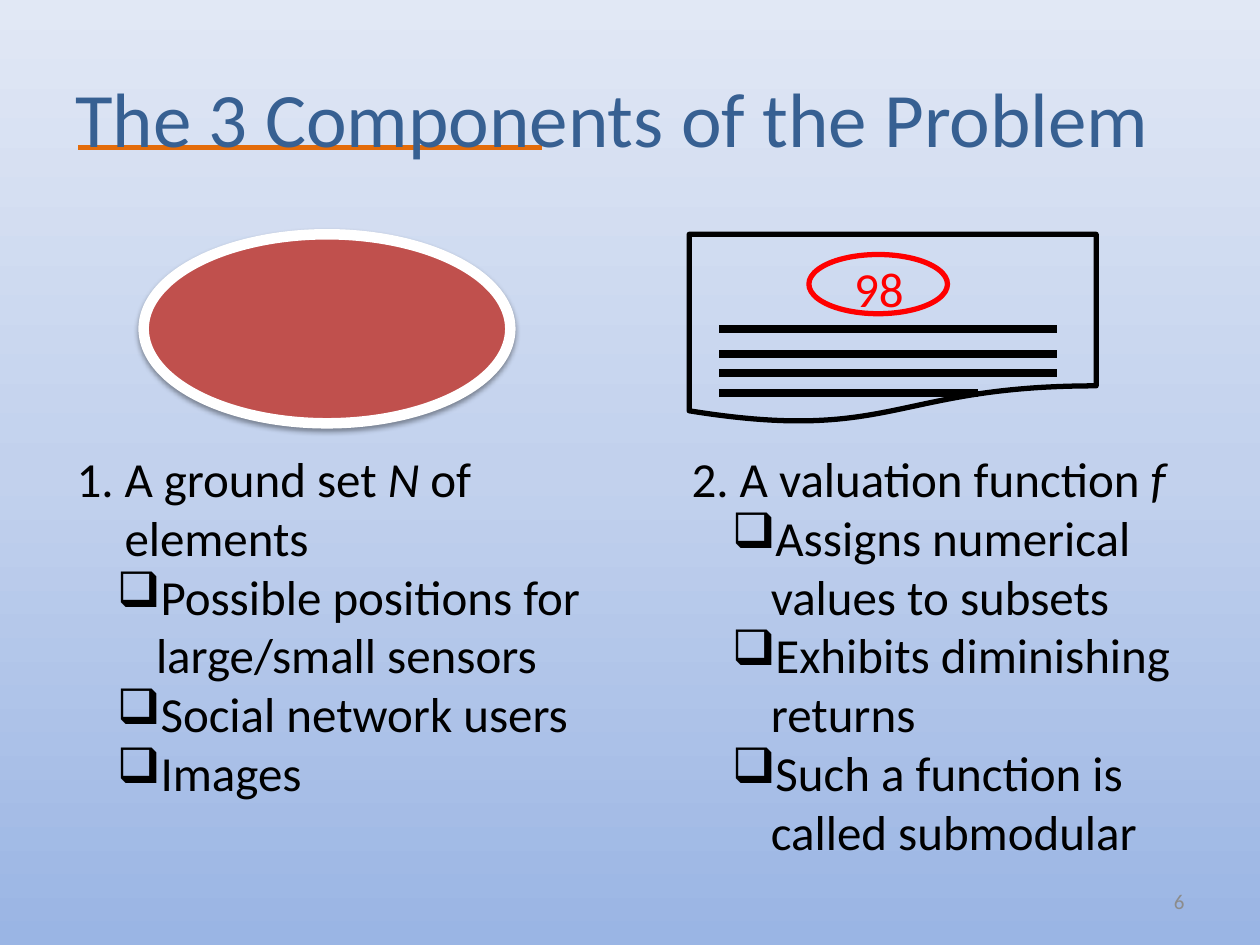
"""Build the slide on the three components of the problem."""
from copy import deepcopy

from lxml.etree import SubElement
from pptx import Presentation
from pptx.dml.color import RGBColor
from pptx.enum.shapes import MSO_CONNECTOR, MSO_SHAPE
from pptx.enum.text import MSO_ANCHOR, MSO_AUTO_SIZE, PP_ALIGN
from pptx.oxml.ns import qn
from pptx.util import Inches, Pt

BLACK = RGBColor(0x00, 0x00, 0x00)
WHITE = RGBColor(0xFF, 0xFF, 0xFF)
RED = RGBColor(0xFF, 0x00, 0x00)
BRICK = RGBColor(0xC0, 0x50, 0x4D)
BLUE = RGBColor(0x37, 0x60, 0x92)
ORANGE = RGBColor(0xE4, 0x6C, 0x0A)
GRAY = RGBColor(0x8C, 0x8C, 0x8C)
BACKGROUND = (
    RGBColor(0x9A, 0xB5, 0xE4),
    RGBColor(0xC2, 0xD1, 0xED),
    RGBColor(0xE1, 0xE8, 0xF5),
)


class SlideBuilder:
    """Hold the text style and the current slide."""

    font_name = "Calibri"
    body_size = 28

    def __init__(self, slide):
        """Start drawing on a slide."""
        self.slide = slide

    def background(self, colors):
        """Fill the background with evenly spaced colours from bottom to top."""
        fill = self.slide.background.fill
        fill.gradient()
        fill.gradient_angle = 90
        stops = fill.gradient_stops
        stop_list = self.slide.background._cSld.find(".//" + qn("a:gsLst"))
        while len(stop_list) < len(colors):
            stop_list.append(deepcopy(stop_list[-1]))
        stops = fill.gradient_stops
        for index, color in enumerate(colors):
            stops[index].color.rgb = color
            stops[index].position = index / (len(colors) - 1)

    def line(self, left, right, top, color, width, parent=None):
        """Draw a horizontal line."""
        shapes = (parent or self.slide).shapes
        connector = shapes.add_connector(
            MSO_CONNECTOR.STRAIGHT, Inches(left), Inches(top), Inches(right), Inches(top)
        )
        connector.line.color.rgb = color
        connector.line.width = Pt(width)
        SubElement(connector._element.spPr, qn("a:effectLst"))

    def shape(self, kind, box, color, width, fill=None, parent=None):
        """Draw an outlined preset shape."""
        shapes = (parent or self.slide).shapes
        shape = shapes.add_shape(kind, *map(Inches, box))
        shape.shadow.inherit = False
        if fill is None:
            shape.fill.background()
        else:
            shape.fill.solid()
            shape.fill.fore_color.rgb = fill
        shape.line.color.rgb = color
        shape.line.width = Pt(width)
        return shape

    def shadow(self, shape):
        """Give a shape a soft shadow below it."""
        effects = shape._element.spPr.find(qn("a:effectLst"))
        outer = SubElement(
            effects, qn("a:outerShdw"), blurRad=str(Pt(3.1)), dist=str(Pt(1.6)),
            dir="5400000", rotWithShape="0",
        )
        color = SubElement(outer, qn("a:srgbClr"), val=str(BLACK))
        SubElement(color, qn("a:alpha"), val="38000")

    def text_box(self, box, wrap=True, anchor=MSO_ANCHOR.TOP, grow=False, parent=None):
        """Add an empty text box and return its text frame."""
        shapes = (parent or self.slide).shapes
        frame = shapes.add_textbox(*map(Inches, box)).text_frame
        frame.word_wrap = wrap
        frame.vertical_anchor = anchor
        if grow:
            frame.auto_size = MSO_AUTO_SIZE.SHAPE_TO_FIT_TEXT
        return frame

    def style(self, paragraph, size, color, align=PP_ALIGN.LEFT):
        """Set the font and alignment of a paragraph."""
        paragraph.alignment = align
        paragraph.font.name = self.font_name
        paragraph.font.size = Pt(size)
        paragraph.font.color.rgb = color

    def label(self, box, text, size, color, align=PP_ALIGN.LEFT, **options):
        """Add a single line of text."""
        paragraph = self.text_box(box, **options).paragraphs[0]
        paragraph.text = text
        self.style(paragraph, size, color, align)

    def bullet(self, paragraph, margin, indent, tag, **attributes):
        """Give a paragraph a hanging bullet or number."""
        properties = paragraph._p.get_or_add_pPr()
        properties.set("marL", str(Inches(margin)))
        properties.set("indent", str(Inches(-indent)))
        mark = properties.makeelement(qn(tag), attributes)
        properties.insert_element_before(mark, "a:tabLst", "a:defRPr", "a:extLst")

    def component(self, box, heading, items, numbered=False):
        """Add a heading with an italic symbol and a list of checkbox items."""
        frame = self.text_box(box, grow=True)
        paragraph = frame.paragraphs[0]
        for text, italic in heading:
            run = paragraph.add_run()
            run.text = text
            run.font.italic = italic
        self.style(paragraph, self.body_size, BLACK)
        if numbered:
            self.bullet(paragraph, 0.38, 0.38, "a:buAutoNum", type="arabicPeriod")
        for item in items:
            paragraph = frame.add_paragraph()
            paragraph.text = item
            paragraph.level = 1
            self.style(paragraph, self.body_size, BLACK)
            self.bullet(paragraph, 0.63, 0.31, "a:buChar", char="❑")


def main():
    """Build and save the presentation."""
    presentation = Presentation()
    presentation.slide_width = Inches(10)
    presentation.slide_height = Inches(7.5)
    builder = SlideBuilder(presentation.slides.add_slide(presentation.slide_layouts[6]))

    builder.background(BACKGROUND)
    builder.line(0.62, 4.3, 1.17, ORANGE, 3)
    builder.label((0.5, 0.3, 9, 1.25), "The 3 Components of the Problem", 44, BLUE,
                  anchor=MSO_ANCHOR.MIDDLE)
    builder.label((7.17, 6.95, 2.33, 0.4), "6", 12, GRAY, PP_ALIGN.RIGHT,
                  anchor=MSO_ANCHOR.MIDDLE)

    ground_set = builder.shape(MSO_SHAPE.OVAL, (1.14, 1.86, 2.91, 1.5), WHITE, 6, BRICK)
    builder.shadow(ground_set)
    builder.component(
        (0.51, 3.51, 4.49, 2.93),
        [("A ground set ", False), ("N", True), (" of elements", False)],
        ["Possible positions for large/small sensors", "Social network users", "Images"],
        numbered=True,
    )

    exam = builder.slide.shapes.add_group_shape()
    builder.shape(MSO_SHAPE.FLOWCHART_DOCUMENT, (5.47, 1.86, 3.23, 1.5), BLACK, 3, parent=exam)
    builder.shape(MSO_SHAPE.OVAL, (6.42, 2.02, 1.1, 0.47), RED, 3, parent=exam)
    builder.label((6.68, 2, 0.6, 0.57), "98", builder.body_size, RED,
                  wrap=False, grow=True, parent=exam)
    for top, right in ((2.61, 8.39), (2.81, 8.39), (2.96, 8.39), (3.12, 7.76)):
        builder.line(5.71, right, top, BLACK, 4.5, parent=exam)
    builder.component(
        (5.39, 3.51, 4.49, 3.4),
        [("2. A valuation function ", False), ("f", True)],
        ["Assigns numerical values to subsets", "Exhibits diminishing returns",
         "Such a function is called submodular"],
    )

    presentation.save("out.pptx")


if __name__ == "__main__":
    main()
